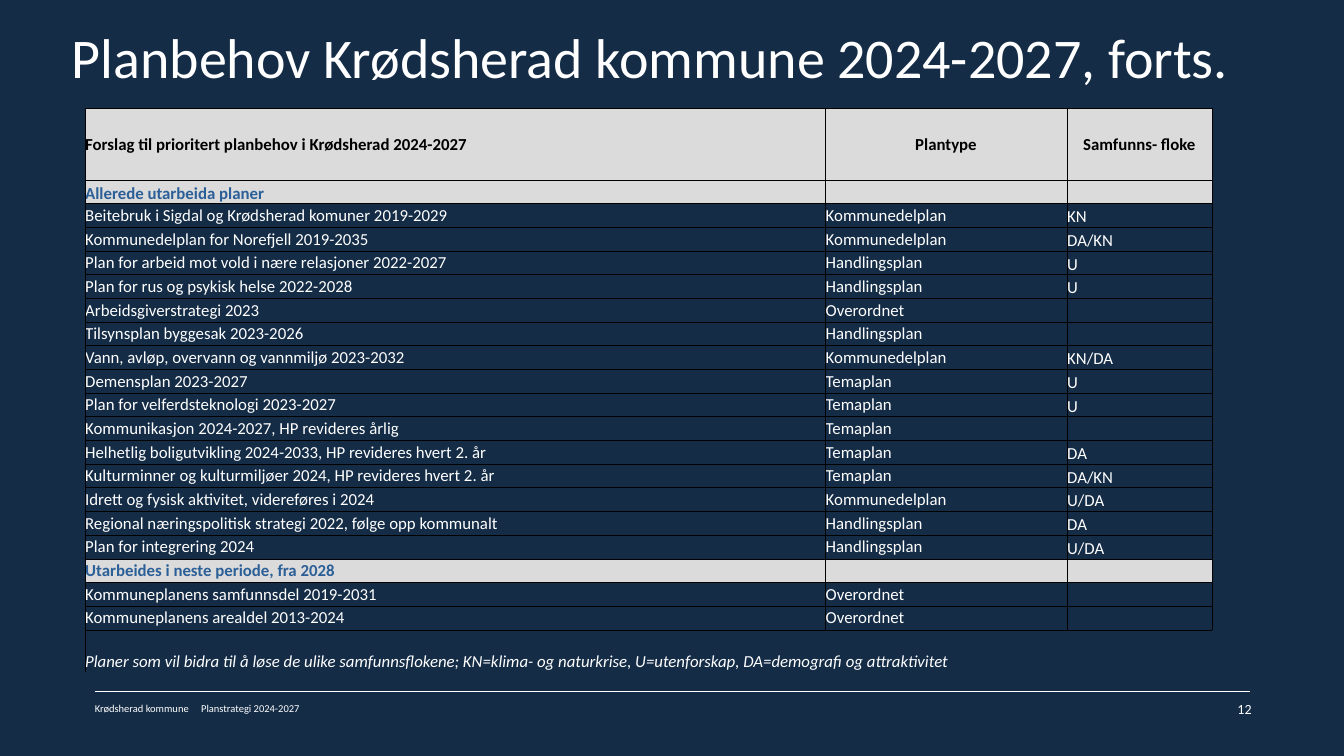
import pptx
import pptx.util
import pptx.dml.color
import pptx.enum.shapes
import pptx.enum.text
import pptx.oxml

HUES = {"back": "142C46", "text": "FFFFFF", "head": "000000",
        "part": "2B5F98", "band": "DBDBDB", "rule": "000000"}
FACE = "Calibri"
UNIT = 9144  # EMU per px, 100 px to the inch
SPACE = 'xmlns:a="http://schemas.openxmlformats.org/drawingml/2006/main"'
LEFT = pptx.enum.text.PP_ALIGN.LEFT
MID = pptx.enum.text.PP_ALIGN.CENTER
RIGHT = pptx.enum.text.PP_ALIGN.RIGHT
ANCHOR = pptx.enum.text.MSO_ANCHOR

HEAD = ("Forslag til prioritert planbehov i Krødsherad 2024-2027", "Plantype", "Samfunns- floke")
DONE = [
    ("Beitebruk i Sigdal og Krødsherad komuner 2019-2029", "Kommunedelplan", "KN"),
    ("Kommunedelplan for Norefjell 2019-2035", "Kommunedelplan", "DA/KN"),
    ("Plan for arbeid mot vold i nære relasjoner 2022-2027", "Handlingsplan", "U"),
    ("Plan for rus og psykisk helse 2022-2028", "Handlingsplan", "U"),
    ("Arbeidsgiverstrategi 2023", "Overordnet", ""),
    ("Tilsynsplan byggesak 2023-2026", "Handlingsplan", ""),
    ("Vann, avløp, overvann og vannmiljø 2023-2032", "Kommunedelplan", "KN/DA"),
    ("Demensplan 2023-2027", "Temaplan", "U"),
    ("Plan for velferdsteknologi 2023-2027", "Temaplan", "U"),
    ("Kommunikasjon 2024-2027, HP revideres årlig", "Temaplan", ""),
    ("Helhetlig boligutvikling 2024-2033, HP revideres hvert 2. år", "Temaplan", "DA"),
    ("Kulturminner og kulturmiljøer 2024, HP revideres hvert 2. år", "Temaplan", "DA/KN"),
    ("Idrett og fysisk aktivitet, videreføres i 2024", "Kommunedelplan", "U/DA"),
    ("Regional næringspolitisk strategi 2022, følge opp kommunalt", "Handlingsplan", "DA"),
    ("Plan for integrering 2024", "Handlingsplan", "U/DA"),
]
NEXT = [
    ("Kommuneplanens samfunnsdel 2019-2031", "Overordnet", ""),
    ("Kommuneplanens arealdel 2013-2024", "Overordnet", ""),
]
NOTE = ("Planer som vil bidra til å løse de ulike samfunnsflokene; KN=klima- og naturkrise, "
        "U=utenforskap, DA=demografi og attraktivitet")


def px(num):
    return pptx.util.Emu(num * UNIT)


def hue(name):
    return pptx.dml.color.RGBColor.from_string(HUES[name])


class Deck:
    def __init__(self, wide, high):
        self.show = pptx.Presentation()
        self.show.slide_width, self.show.slide_height = px(wide), px(high)
        self.page = self.show.slides.add_slide(self.show.slide_layouts[5])
        fill = self.page.background.fill
        fill.solid()
        fill.fore_color.rgb = hue("back")

    def style(self, para, size, color="text", align=LEFT, bold=False, ital=False):
        para.alignment = align
        font = para.font
        font.name, font.size = FACE, pptx.util.Pt(size)
        font.bold, font.italic = bold, ital
        font.color.rgb = hue(color)

    def place(self, shape, box, text, size, align=LEFT, anchor=ANCHOR.TOP):
        shape.left, shape.top, shape.width, shape.height = map(px, box)
        frame = shape.text_frame
        frame.text = text
        frame.word_wrap = True
        frame.auto_size = pptx.enum.text.MSO_AUTO_SIZE.NONE
        frame.vertical_anchor = anchor
        frame.margin_left = frame.margin_right = 0
        frame.margin_top = frame.margin_bottom = 0
        self.style(frame.paragraphs[0], size, align=align)

    def title(self, box, text, size):
        self.place(self.page.shapes.title, box, text, size, MID)

    def label(self, box, text, size, align=LEFT, anchor=ANCHOR.MIDDLE):
        shape = self.page.shapes.add_textbox(*map(px, box))
        self.place(shape, box, text, size, align, anchor)

    def line(self, x1, y1, x2, y2, width):
        kind = pptx.enum.shapes.MSO_CONNECTOR.STRAIGHT
        line = self.page.shapes.add_connector(kind, px(x1), px(y1), px(x2), px(y2))
        line.line.color.rgb = hue("text")
        line.line.width = pptx.util.Pt(width)
        line._element.spPr.append(pptx.oxml.parse_xml(f"<a:effectLst {SPACE}/>"))

    def edge(self, cell, sides):
        props = cell._tc.get_or_add_tcPr()
        for side in "LRTB":
            fill = "<a:noFill/>"
            if side in sides:
                fill = f'<a:solidFill><a:srgbClr val="{HUES["rule"]}"/></a:solidFill>'
            props.append(pptx.oxml.parse_xml(
                f'<a:ln{side} {SPACE} w="6350">{fill}</a:ln{side}>'))

    def cell(self, cell, text, anchor=ANCHOR.MIDDLE, band=False, sides="LRTB", **look):
        cell.text = text
        cell.vertical_anchor = anchor
        cell.margin_left = cell.margin_right = cell.margin_top = px(1)
        cell.margin_bottom = 0
        self.style(cell.text_frame.paragraphs[0], 24, **look)
        self.edge(cell, sides)
        if band:
            cell.fill.solid()
            cell.fill.fore_color.rgb = hue("band")
        else:
            cell.fill.background()

    def table(self, left, top, cols, highs):
        frame = self.page.shapes.add_table(len(highs), len(cols), px(left), px(top),
                                           px(sum(cols)), px(sum(highs)))
        grid = frame.table
        grid.first_row = grid.horz_banding = False
        for col, wide in zip(grid.columns, cols):
            col.width = px(wide)
        for row, high in zip(grid.rows, highs):
            row.height = px(high)
        return grid


def main():
    deck = Deck(2666, 1500)

    # Footer rule and owner
    deck.line(188, 1371, 2479, 1371, 0.3)
    deck.label((188, 1392, 656, 25), "Krødsherad kommune", 15, anchor=ANCHOR.TOP)

    # Title
    deck.title((79, 45, 2448, 341), "Planbehov Krødsherad kommune 2024-2027, forts. ", 80)

    # Footer text and page number
    deck.label((399, 1392, 900, 25), "Planstrategi 2024-2027", 15)
    deck.label((1883, 1389, 600, 34), "12", 20, RIGHT)

    # Plan table: heading, two sections, note
    rows = [HEAD, ("Allerede utarbeida planer", "", ""), *DONE,
            ("Utarbeides i neste periode, fra 2028", "", ""), *NEXT]
    parts = (1, len(DONE) + 2)
    grid = deck.table(168, 215, (1469, 479, 288), [142] + [47] * (len(rows) - 1) + [84])
    for r, row in enumerate(rows):
        for c, text in enumerate(row):
            look = {}
            if r == 0:
                look = dict(color="head", bold=True, band=True, align=MID if c else LEFT)
            elif r in parts:
                look = dict(color="part", bold=True, band=True)
            low = r == 1 or (r > 1 and c == 2)
            deck.cell(grid.cell(r, c), text, ANCHOR.BOTTOM if low else ANCHOR.MIDDLE, **look)
    last = len(rows)
    grid.cell(last, 0).merge(grid.cell(last, 2))
    deck.cell(grid.cell(last, 0), NOTE, ANCHOR.BOTTOM, sides="LT", ital=True)

    deck.show.save("out.pptx")


if __name__ == "__main__":
    main()
